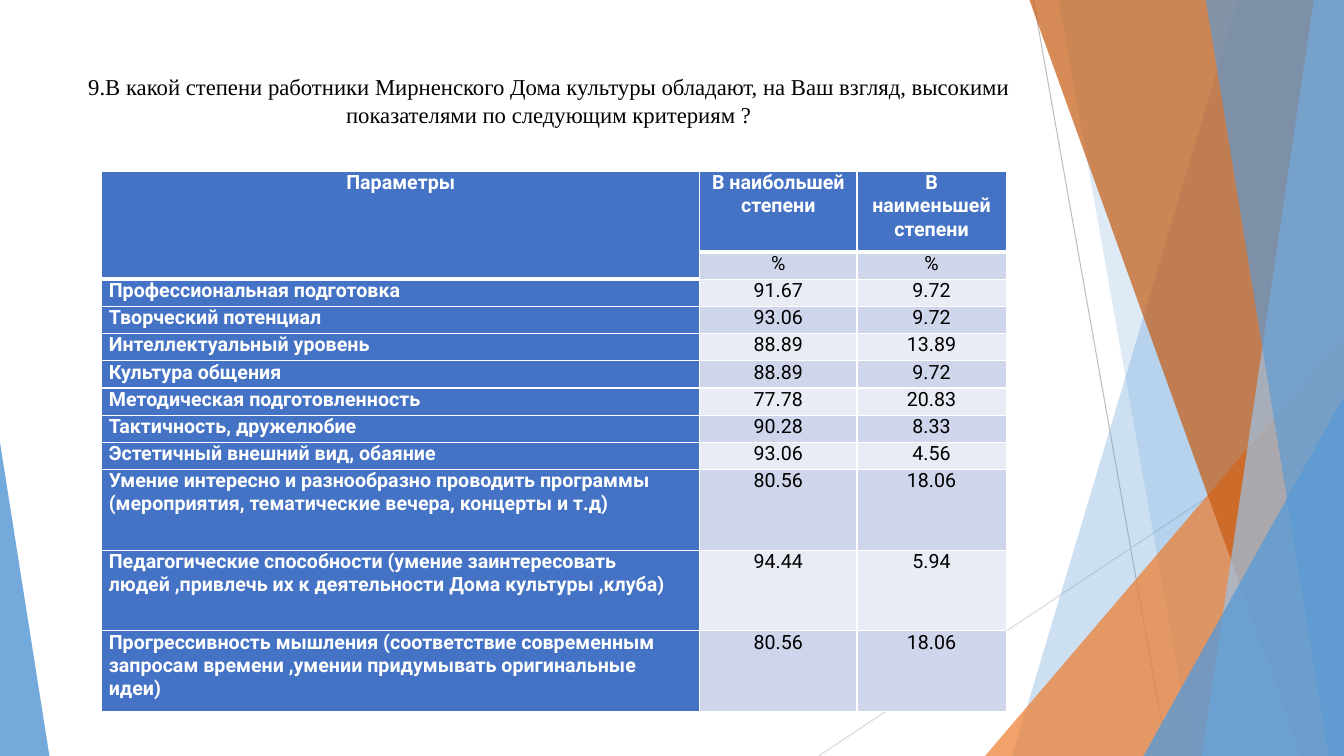
from dataclasses import dataclass

import lxml.etree
import pptx
import pptx.dml.color
import pptx.enum.shapes
import pptx.enum.text
import pptx.oxml.ns
import pptx.util

Inches = pptx.util.Inches
Pt = pptx.util.Pt
qn = pptx.oxml.ns.qn
ALIGN = pptx.enum.text.PP_ALIGN

WIDTH, HEIGHT = 13.33, 7.5
COLOURS = {
    "white": "FFFFFF", "black": "000000", "blue": "5B9BD5", "pale blue": "9DC3E6",
    "orange": "ED7D31", "rust": "C55A11", "grey": "BFBFBF", "light grey": "D9D9D9",
    "header": "4472C4", "dark band": "CFD5EA", "light band": "E9EBF5",
}


@dataclass
class Ray:
    """A straight background line."""
    start: tuple[float, float]
    end: tuple[float, float]
    colour: str


@dataclass
class Facet:
    """A panel from a slanted left edge to the right side of the page."""
    top_left: float
    bottom_left: float
    colour: str
    opacity: int


@dataclass
class Corner:
    """A right triangle standing on the bottom of the page."""
    left: float
    width: float
    height: float
    apex: float
    colour: str
    opacity: int


@dataclass
class Criterion:
    name: str
    most: str
    least: str
    height: float = 0.27


RAYS = [
    Ray((10.25, 0), (11.58, HEIGHT), "grey"),
    Ray((WIDTH, 4.03), (8.12, HEIGHT), "light grey"),
]
PANELS = [
    Facet(12.28, 10.04, "blue", 30),
    Facet(10.5, 11.83, "blue", 20),
    Corner(9.77, 3.56, 4.17, 1, "orange", 72),
    Facet(10.21, 12.91, "rust", 70),
    Facet(13.03, 11.92, "pale blue", 70),
    Facet(11.96, 13.18, "blue", 65),
    Corner(11.34, 1.99, 3.57, 1, "blue", 80),
    Corner(0, 0.49, 3.11, 0, "blue", 85),
]
TITLE = ("9.В какой степени работники Мирненского Дома культуры обладают, "
         "на Ваш взгляд, высокими показателями по следующим критериям ?")
COLUMN_WIDTHS = [5.93, 1.56, 1.48]
CRITERIA = [
    Criterion("Параметры", "В наибольшей степени", "В наименьшей степени", 0.8),
    Criterion("", "%", "%"),
    Criterion("Профессиональная подготовка", "91.67", "9.72"),
    Criterion("Творческий потенциал", "93.06", "9.72"),
    Criterion("Интеллектуальный уровень", "88.89", "13.89"),
    Criterion("Культура общения", "88.89", "9.72"),
    Criterion("Методическая подготовленность", "77.78", "20.83"),
    Criterion("Тактичность, дружелюбие", "90.28", "8.33"),
    Criterion("Эстетичный внешний вид, обаяние", "93.06", "4.56"),
    Criterion("Умение интересно и разнообразно проводить программы "
              "(мероприятия, тематические вечера, концерты и т.д)", "80.56", "18.06", 0.8),
    Criterion("Педагогические способности (умение заинтересовать людей ,привлечь их "
              "к деятельности Дома культуры ,клуба)", "94.44", "5.94", 0.8),
    Criterion("Прогрессивность мышления (соответствие современным запросам времени "
              ",умении придумывать оригинальные идеи)", "80.56", "18.06", 0.8),
]


def rgb(name: str) -> pptx.dml.color.RGBColor:
    return pptx.dml.color.RGBColor.from_string(COLOURS[name])


def draw_ray(page, ray: Ray) -> None:
    points = [Inches(value) for value in (*ray.start, *ray.end)]
    line = page.shapes.add_connector(pptx.enum.shapes.MSO_CONNECTOR.STRAIGHT, *points)
    line.line.color.rgb = rgb(ray.colour)
    line.line.width = Pt(0.75)
    lxml.etree.SubElement(line._element.spPr, qn("a:effectLst"))


def draw_panel(page, panel: Facet | Corner) -> None:
    if isinstance(panel, Facet):
        builder = page.shapes.build_freeform(Inches(panel.top_left), 0)
        corners = [(WIDTH, 0), (WIDTH, HEIGHT), (panel.bottom_left, HEIGHT)]
        builder.add_line_segments([(Inches(x), Inches(y)) for x, y in corners])
        shape = builder.convert_to_shape()
    else:
        shape = page.shapes.add_shape(
            pptx.enum.shapes.MSO_SHAPE.ISOSCELES_TRIANGLE,
            Inches(panel.left), Inches(HEIGHT - panel.height),
            Inches(panel.width), Inches(panel.height))
        shape.adjustments[0] = panel.apex
    shape.shadow.inherit = False
    shape.line.fill.background()
    shape.fill.solid()
    shape.fill.fore_color.rgb = rgb(panel.colour)
    colour = shape._element.spPr.find(qn("a:solidFill"))[0]
    lxml.etree.SubElement(colour, qn("a:alpha"), val=str(panel.opacity * 1000))


def draw_title(page) -> None:
    box = page.shapes.add_textbox(Inches(0.74), Inches(0.67), Inches(9.4), Inches(0.94))
    box.text_frame.word_wrap = True
    para = box.text_frame.paragraphs[0]
    para.text = TITLE
    para.alignment = ALIGN.CENTER
    para.line_spacing = Pt(20)
    para.font.name = "Times New Roman"
    para.font.size = Pt(16.2)
    para.font.color.rgb = rgb("black")


def set_borders(cell, widths: dict[str, float]) -> None:
    """Put white borders, in schema order, before the cell's fill."""
    properties = cell._tc.get_or_add_tcPr()
    for index, (side, width) in enumerate(widths.items()):
        border = lxml.etree.Element(qn(f"a:ln{side}"), w=str(Pt(width)))
        fill = lxml.etree.SubElement(border, qn("a:solidFill"))
        lxml.etree.SubElement(fill, qn("a:srgbClr"), val=COLOURS["white"])
        properties.insert(index, border)


def fill_cell(cell, text: str, row: int, column: int) -> None:
    is_header = row == 0 or column == 0
    cell.margin_left = cell.margin_right = Inches(0.07)
    cell.margin_top = cell.margin_bottom = 0
    cell.fill.solid()
    band = "dark band" if row % 2 else "light band"
    cell.fill.fore_color.rgb = rgb("header" if is_header else band)
    para = cell.text_frame.paragraphs[0]
    if text:
        para.text = text
    para.alignment = ALIGN.CENTER if row == 0 or column else ALIGN.LEFT
    para.font.name = "Roboto"
    para.font.size = Pt(14)
    para.font.bold = is_header
    para.font.color.rgb = rgb("white" if is_header else "black")
    widths = {"L": 1, "R": 1}
    if row == 0:
        widths["T"] = 1
    widths["B"] = 3 if row == 0 or (row, column) == (1, 0) else 1
    set_borders(cell, widths)


def draw_table(page) -> None:
    frame = page.shapes.add_table(
        len(CRITERIA), len(COLUMN_WIDTHS), Inches(1.01), Inches(1.7),
        Inches(sum(COLUMN_WIDTHS)), Inches(sum(item.height for item in CRITERIA)))
    table = frame.table
    table.first_row = table.horz_banding = False
    for column, width in enumerate(COLUMN_WIDTHS):
        table.columns[column].width = Inches(width)
    for row, item in enumerate(CRITERIA):
        table.rows[row].height = Inches(item.height)
        for column, text in enumerate((item.name, item.most, item.least)):
            fill_cell(table.cell(row, column), text, row, column)
    table.cell(0, 0).merge(table.cell(1, 0))


def main() -> None:
    deck = pptx.Presentation()
    deck.slide_width, deck.slide_height = Inches(WIDTH), Inches(HEIGHT)
    page = deck.slides.add_slide(deck.slide_layouts[6])
    # Background
    for ray in RAYS:
        draw_ray(page, ray)
    for panel in PANELS:
        draw_panel(page, panel)
    # Question and answers
    draw_title(page)
    draw_table(page)
    deck.save("out.pptx")


if __name__ == "__main__":
    main()
